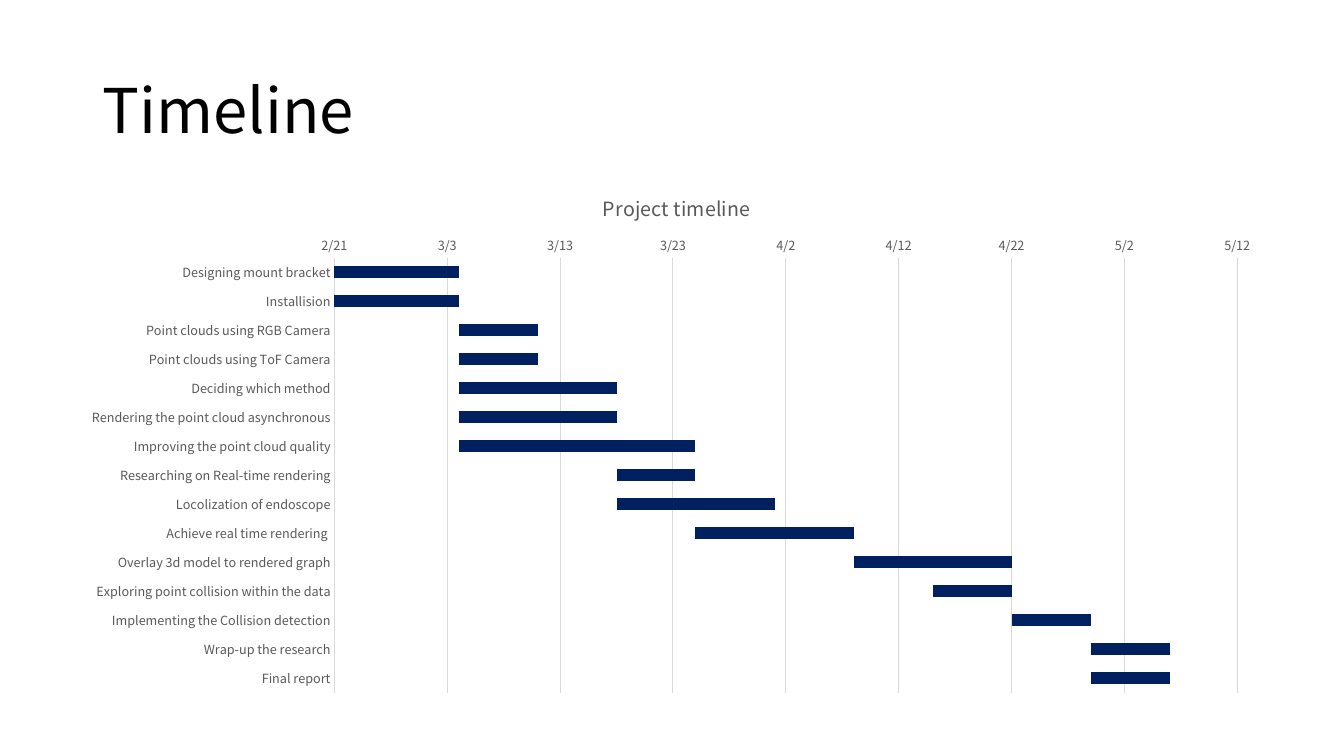
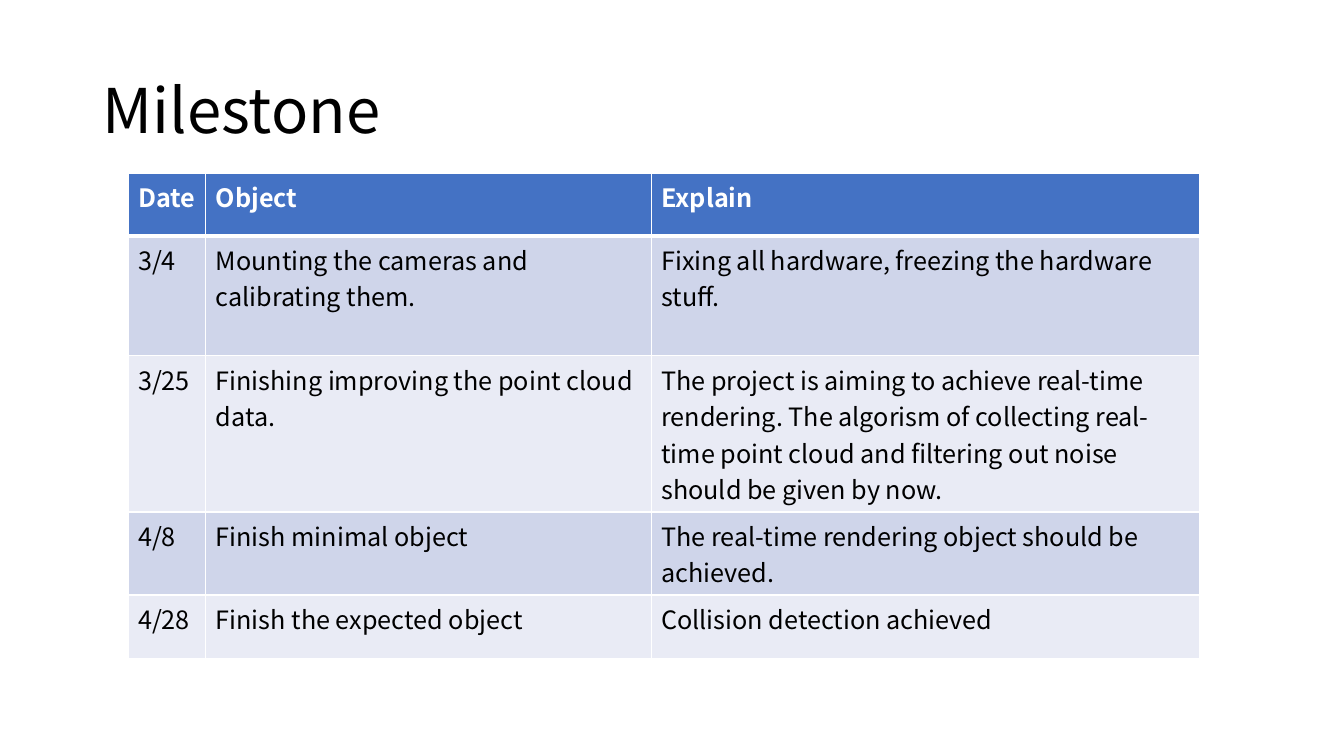
"""Build a project schedule of two slides: a Gantt chart and a milestone table."""
from dataclasses import dataclass
from typing import Optional

from lxml import etree
from pptx import Presentation
from pptx.chart.data import CategoryChartData
from pptx.dml.color import RGBColor
from pptx.enum.chart import XL_CHART_TYPE, XL_TICK_MARK
from pptx.enum.text import MSO_ANCHOR, PP_ALIGN
from pptx.oxml.ns import qn
from pptx.util import Inches, Pt

STACKED_BAR = XL_CHART_TYPE.BAR_STACKED
NO_TICK = XL_TICK_MARK.NONE
MIDDLE = MSO_ANCHOR.MIDDLE
LEFT = PP_ALIGN.LEFT

FONT = "Noto Sans CJK SC"
BLACK, WHITE = "000000", "FFFFFF"
GREY, GRID = "595959", "D9D9D9"
NAVY, HEADER = "002060", "4472C4"
BANDS = ("CFD5EA", "E9EBF5")
TITLE_ONLY = 5
FIRST_DAY, LAST_DAY, DAY_STEP = 44613, 44693, 10


@dataclass(frozen=True)
class Task:
    """A named piece of work, its start in days after the first day, and its length."""
    name: str
    start: int
    days: int


@dataclass(frozen=True)
class Milestone:
    """A table row: date, object, explanation and row height in inches."""
    date: str
    goal: str
    explanation: str
    height: float


TASKS = (
    Task("Designing mount bracket", 0, 11),
    Task("Installision", 0, 11),
    Task("Point clouds using RGB Camera", 11, 7),
    Task("Point clouds using ToF Camera", 11, 7),
    Task("Deciding which method", 11, 14),
    Task("Rendering the point cloud asynchronous", 11, 14),
    Task("Improving the point cloud quality", 11, 21),
    Task("Researching on Real-time rendering", 25, 7),
    Task("Locolization of endoscope", 25, 14),
    Task("Achieve real time rendering ", 32, 14),
    Task("Overlay 3d model to rendered graph", 46, 14),
    Task("Exploring point collision within the data", 53, 7),
    Task("Implementing the Collision detection", 60, 7),
    Task("Wrap-up the research", 67, 7),
    Task("Final report", 67, 7),
)

MILESTONES = (
    Milestone("Date", "Object", "Explain", 0.62),
    Milestone("3/4", "Mounting the cameras and calibrating them.",
              "Fixing all hardware, freezing the hardware stuff.", 1.19),
    Milestone("3/25", "Finishing improving the point cloud data.",
              "The project is aiming to achieve real-time rendering. The algorism of "
              "collecting real-time point cloud and filtering out noise should be given "
              "by now.", 1.55),
    Milestone("4/8", "Finish minimal object",
              "The real-time rendering object should be achieved.", 0.82),
    Milestone("4/28", "Finish the expected object", "Collision detection achieved", 0.63),
)
COLUMN_WIDTHS = (0.77, 4.42, 5.44)


def rgb(value: str) -> RGBColor:
    """Turn a hex string into a colour."""
    return RGBColor.from_string(value)


def style_font(font, size: float, color: str, bold: bool = False) -> None:
    """Give a font the deck's typeface, a size, a colour and a weight."""
    font.name = FONT
    font.size = Pt(size)
    font.bold = bold
    font.color.rgb = rgb(color)


def style_line(line, color: str, width: float) -> None:
    """Give a line a colour and a width in points."""
    line.color.rgb = rgb(color)
    line.width = Pt(width)


def add_titled_slide(prs, heading: str):
    """Add a slide whose title placeholder carries the heading."""
    slide = prs.slides.add_slide(prs.slide_layouts[TITLE_ONLY])
    title = slide.shapes.title
    title.left, title.top = Inches(0.92), Inches(0.4)
    title.width, title.height = Inches(11.5), Inches(1.45)
    frame = title.text_frame
    frame.text = heading
    frame.vertical_anchor = MIDDLE
    paragraph = frame.paragraphs[0]
    paragraph.alignment = LEFT
    paragraph.line_spacing = 0.9
    style_font(paragraph.runs[0].font, 44, BLACK)
    return slide


def place_chart_part(parent, index: int, x: float, y: float,
                     size: Optional[tuple[float, float]] = None) -> None:
    """Fix a chart part at fractions of the chart area."""
    for automatic in parent.findall(qn("c:layout")):
        parent.remove(automatic)
    layout = etree.Element(qn("c:layout"))
    manual = etree.SubElement(layout, qn("c:manualLayout"))
    settings = [("xMode", "edge"), ("yMode", "edge"), ("x", x), ("y", y)]
    if size:
        settings.insert(0, ("layoutTarget", "inner"))
        settings += [("w", size[0]), ("h", size[1])]
    for tag, value in settings:
        etree.SubElement(manual, qn(f"c:{tag}")).set("val", str(value))
    parent.insert(index, layout)


def add_gantt(slide) -> None:
    """Draw the tasks as stacked bars whose first part is invisible."""
    data = CategoryChartData()
    data.categories = [task.name for task in TASKS]
    data.add_series("Series 1", [FIRST_DAY + task.start for task in TASKS])
    data.add_series("Series 2", [task.days for task in TASKS])
    chart = slide.shapes.add_chart(STACKED_BAR, Inches(0.69), Inches(1.65),
                                   Inches(11.94), Inches(5.33), data).chart
    style_font(chart.font, 10, BLACK)
    chart.has_legend = False
    chart.has_title = True
    heading = chart.chart_title.text_frame
    heading.text = "Project timeline"
    style_font(heading.paragraphs[0].runs[0].font, 14, GREY)

    plot = chart.plots[0]
    plot.gap_width, plot.overlap = 150, 100
    plot.vary_by_categories = False
    offsets, durations = plot.series
    offsets.format.fill.background()
    durations.format.fill.solid()
    durations.format.fill.fore_color.rgb = rgb(NAVY)

    tasks, dates = chart.category_axis, chart.value_axis
    for axis in (tasks, dates):
        axis.major_tick_mark = axis.minor_tick_mark = NO_TICK
        style_font(axis.tick_labels.font, 9, GREY)
    tasks.reverse_order = True
    style_line(tasks.format.line, GRID, 0.75)
    dates.minimum_scale, dates.maximum_scale = FIRST_DAY, LAST_DAY
    dates.major_unit = DAY_STEP
    dates.format.line.fill.background()
    dates.has_major_gridlines = True
    style_line(dates.major_gridlines.format.line, GRID, 0.75)
    dates.tick_labels.number_format = "m/d;@"
    dates.tick_labels.number_format_is_linked = False

    area = chart.element.find(qn("c:chart"))
    place_chart_part(area.find(qn("c:title")), 1, 0.44, 0.04)
    place_chart_part(area.find(qn("c:plotArea")), 0, 0.22, 0.17, (0.75, 0.81))


def set_borders(cell, top: float, bottom: float) -> None:
    """Draw white borders round a cell, one point wide at the sides."""
    properties = cell._tc.get_or_add_tcPr()
    widths = {"lnL": 1, "lnR": 1, "lnT": top, "lnB": bottom}
    for index, (side, width) in enumerate(widths.items()):
        border = etree.Element(qn(f"a:{side}"), w=str(Pt(width)))
        fill = etree.SubElement(border, qn("a:solidFill"))
        etree.SubElement(fill, qn("a:srgbClr"), val=WHITE)
        properties.insert(index, border)


def add_milestones(slide) -> None:
    """Draw the milestones as a banded table."""
    total_height = sum(milestone.height for milestone in MILESTONES)
    table = slide.shapes.add_table(
        len(MILESTONES), len(COLUMN_WIDTHS), Inches(1.27), Inches(1.72),
        Inches(sum(COLUMN_WIDTHS)), Inches(total_height)).table
    for column, width in zip(table.columns, COLUMN_WIDTHS):
        column.width = Inches(width)
    for number, milestone in enumerate(MILESTONES):
        is_header = number == 0
        table.rows[number].height = Inches(milestone.height)
        texts = (milestone.date, milestone.goal, milestone.explanation)
        for cell, text in zip(table.rows[number].cells, texts):
            cell.text_frame.text = text
            style_font(cell.text_frame.paragraphs[0].runs[0].font, 18,
                       WHITE if is_header else BLACK, is_header)
            cell.fill.solid()
            cell.fill.fore_color.rgb = rgb(HEADER if is_header else BANDS[(number - 1) % 2])
            set_borders(cell, 3 if number == 1 else 1, 3 if is_header else 1)


def main() -> None:
    """Build and save the deck."""
    prs = Presentation()
    prs.slide_width, prs.slide_height = Inches(13.33), Inches(7.5)
    add_gantt(add_titled_slide(prs, "Timeline"))
    add_milestones(add_titled_slide(prs, "Milestone"))
    prs.save("out.pptx")


if __name__ == "__main__":
    main()
